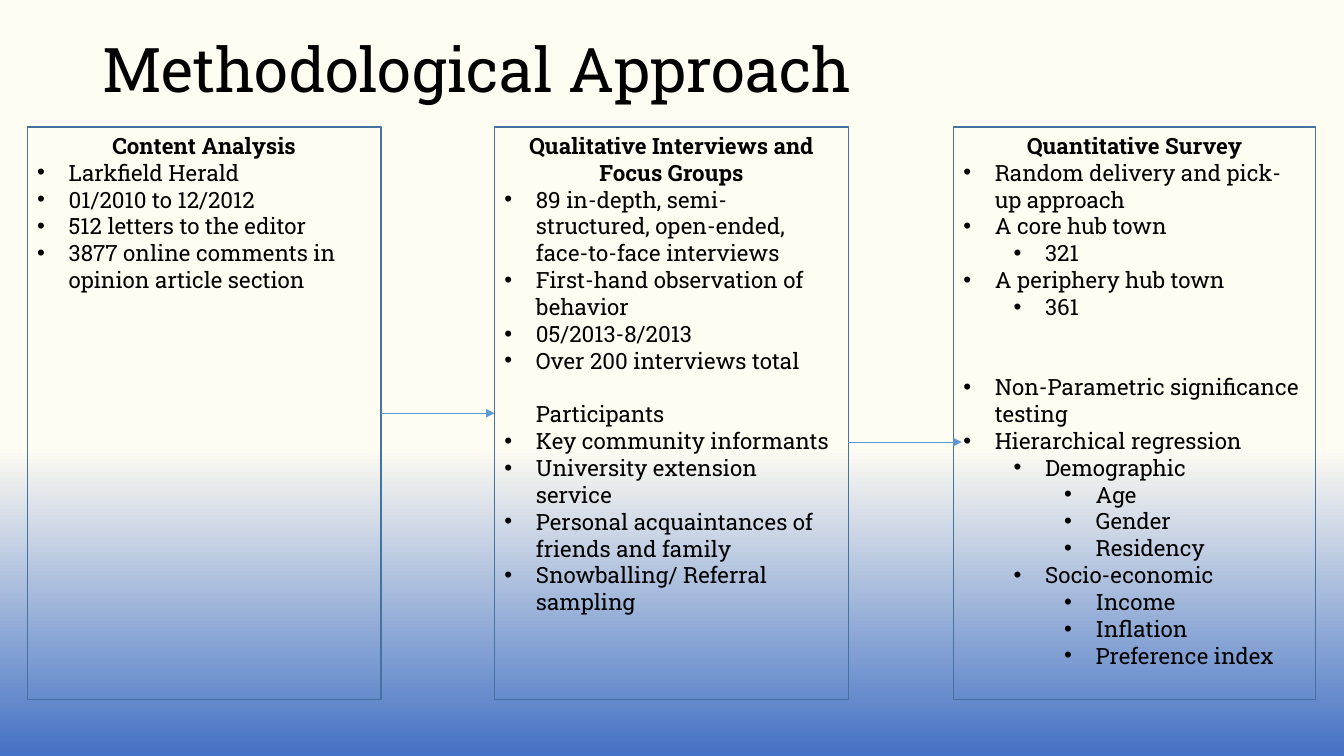
from lxml.etree import SubElement
from pptx import Presentation
from pptx.dml.color import RGBColor
from pptx.enum.shapes import MSO_CONNECTOR, MSO_SHAPE
from pptx.enum.text import MSO_ANCHOR, PP_ALIGN
from pptx.oxml.ns import qn
from pptx.util import Emu, Pt

PX = 9525
FONT = "Roboto Slab"
COLORS = {"cream": "FFFCF2", "blue": "4472C4", "border": "43739E",
          "arrow": "5B9BD5", "text": "000000"}
BOX_TOP, BOX_HEIGHT = 121, 545
HANGING, LEVEL_STEP = 30, 48

# Each item: text, level (None for an unbulleted heading), points of space before.
COLUMNS = [
    (26, 337, "Content Analysis", [
        ("Larkfield Herald", 0, 0),
        ("01/2010 to 12/2012", 0, 0),
        ("512 letters to the editor", 0, 0),
        ("3877 online comments in opinion article section", 0, 0),
    ]),
    (471, 337, "Qualitative Interviews and Focus Groups", [
        ("89 in-depth, semi-structured, open-ended, face-to-face interviews", 0, 0),
        ("First-hand observation of behavior", 0, 0),
        ("05/2013-8/2013", 0, 0),
        ("Over 200 interviews total", 0, 0),
        ("Participants", None, 19),
        ("Key community informants", 0, 0),
        ("University extension service", 0, 0),
        ("Personal acquaintances of friends and family", 0, 0),
        ("Snowballing/ Referral sampling", 0, 0),
    ]),
    (908, 345, "Quantitative Survey", [
        ("Random delivery and pick-up approach", 0, 0),
        ("A core hub town", 0, 0),
        ("321", 1, 0),
        ("A periphery hub town", 0, 0),
        ("361", 1, 0),
        ("Non-Parametric significance testing", 0, 38),
        ("Hierarchical regression", 0, 0),
        ("Demographic", 1, 0),
        ("Age", 2, 0),
        ("Gender", 2, 0),
        ("Residency", 2, 0),
        ("Socio-economic", 1, 0),
        ("Income", 2, 0),
        ("Inflation", 2, 0),
        ("Preference index", 2, 0),
    ]),
]


def px(*lengths):
    """Turn pixel lengths into a list of EMU."""
    return [Emu(length * PX) for length in lengths]


def color(name):
    """Return the named colour."""
    return RGBColor.from_string(COLORS[name])


def add_span(para, text, size, bold=False):
    """Add one run of text to a paragraph."""
    span = para.add_run()
    span.text = text
    span.font.name = FONT
    span.font.size = Pt(size)
    span.font.bold = bold
    span.font.color.rgb = color("text")


def paint_background(page):
    """Fill the page with the cream to blue gradient."""
    fill = page.background.fill
    fill.gradient()
    fill.gradient_angle = 270
    for stop, name, position in zip(fill.gradient_stops, ("cream", "blue"), (0.59, 1)):
        stop.color.rgb = color(name)
        stop.position = position


def add_title(page, text):
    """Add the page title."""
    frame = page.shapes.add_textbox(*px(88, 0, 1104, 139)).text_frame
    frame.word_wrap = True
    frame.vertical_anchor = MSO_ANCHOR.MIDDLE
    para = frame.paragraphs[0]
    para.line_spacing = 0.9
    add_span(para, text, 44)


def add_item(frame, text, level, gap):
    """Add a bulleted item, or an indented heading when level is None."""
    para = frame.add_paragraph()
    para.alignment = PP_ALIGN.LEFT
    para.space_before = Pt(gap)
    para.level = level or 0
    properties = para._p.get_or_add_pPr()
    properties.set("marL", str((HANGING + para.level * LEVEL_STEP) * PX))
    if level is None:
        properties.set("indent", "0")
    else:
        properties.set("indent", str(-HANGING * PX))
        SubElement(properties, qn("a:buFont")).set("typeface", "Arial")
        SubElement(properties, qn("a:buChar")).set("char", "•")
    add_span(para, text, 16)


def add_column(page, left, width, heading, items):
    """Add an outlined box with a heading and its list."""
    box = page.shapes.add_shape(
        MSO_SHAPE.RECTANGLE, *px(left, BOX_TOP, width, BOX_HEIGHT))
    box.shadow.inherit = False
    box.fill.background()
    box.line.color.rgb = color("border")
    box.line.width = Pt(1)
    frame = box.text_frame
    frame.word_wrap = True
    frame.vertical_anchor = MSO_ANCHOR.TOP
    frame.paragraphs[0].alignment = PP_ALIGN.CENTER
    add_span(frame.paragraphs[0], heading, 16, bold=True)
    for item in items:
        add_item(frame, *item)
    return box


def add_arrow(page, start, end, height):
    """Add a horizontal arrow and return it."""
    arrow = page.shapes.add_connector(
        MSO_CONNECTOR.STRAIGHT, *px(start, height, end, height))
    arrow.line.color.rgb = color("arrow")
    arrow.line.width = Pt(0.5)
    SubElement(arrow.line._get_or_add_ln(), qn("a:tailEnd")).set("type", "triangle")
    SubElement(arrow._element.spPr, qn("a:effectLst"))
    return arrow


def main():
    """Build and save the deck."""
    deck = Presentation()
    deck.slide_width, deck.slide_height = px(1280, 720)
    page = deck.slides.add_slide(deck.slide_layouts[6])
    paint_background(page)
    add_title(page, "Methodological Approach")
    content, interviews, _ = [add_column(page, *column) for column in COLUMNS]
    joined = add_arrow(page, 363, 471, 394)
    joined.begin_connect(content, 3)
    joined.end_connect(interviews, 1)
    add_arrow(page, 808, 916, 421)
    deck.save("out.pptx")


if __name__ == "__main__":
    main()
